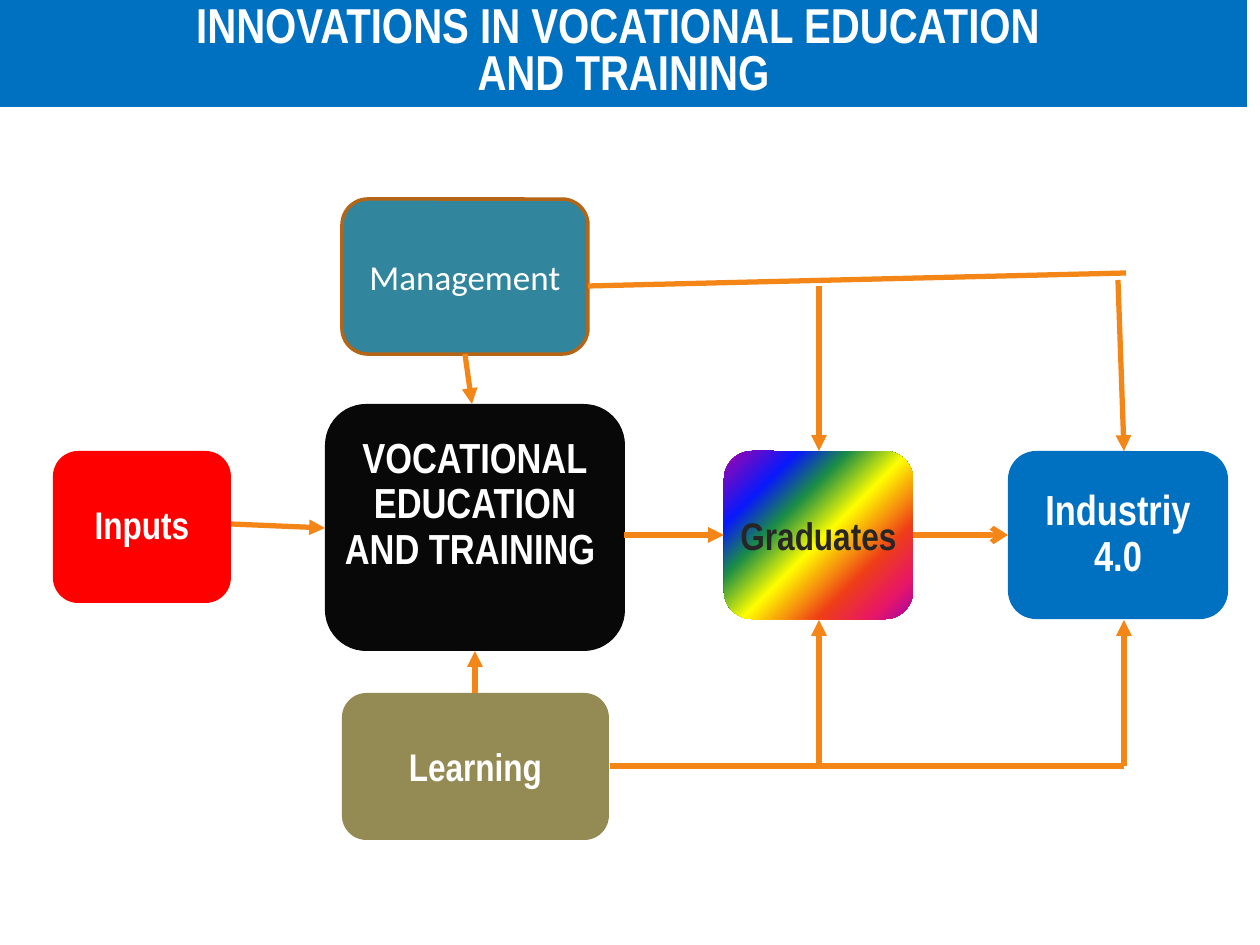
from lxml.etree import SubElement
from pptx import Presentation
from pptx.dml.color import RGBColor
from pptx.enum.shapes import MSO_CONNECTOR, MSO_SHAPE
from pptx.enum.text import MSO_ANCHOR, PP_ALIGN
from pptx.oxml.ns import qn
from pptx.util import Pt

SCALE = 914400 / 126
ORANGE = "F48618"
RAINBOW = [(0, "A603AB"), (21, "0819FB"), (35, "1A8D48"), (52, "FFFF00"),
           (73, "EE3F17"), (88, "E81766"), (100, "A603AB")]


def px(n):
    return round(n * SCALE)


def color(code):
    return RGBColor.from_string(code)


def write(shape, lines, size, ink="FFFFFF", font="Arial Narrow", bold=True,
          space=1.0):
    frame = shape.text_frame
    frame.text = "\n".join(lines)
    for para in frame.paragraphs:
        para.alignment = PP_ALIGN.CENTER
        para.line_spacing = space
        para.font.name = font
        para.font.size = Pt(size)
        para.font.bold = bold
        para.font.color.rgb = color(ink)


def add_box(slide, kind, at, fill, wrap=False):
    box = slide.shapes.add_shape(kind, *map(px, at))
    box.shadow.inherit = False
    if fill:
        box.fill.solid()
        box.fill.fore_color.rgb = color(fill)
    box.line.fill.background()
    box.text_frame.word_wrap = wrap
    box.text_frame.vertical_anchor = MSO_ANCHOR.MIDDLE
    return box


def add_node(slide, at, fill, lines, size, wrap=False, **style):
    node = add_box(slide, MSO_SHAPE.ROUNDED_RECTANGLE, at, fill, wrap)
    write(node, lines, size, **style)
    return node


def blend(shape, stops):
    """Fill the shape with a diagonal gradient of (percent, colour) stops."""
    shape.fill.gradient()
    shape.fill.gradient_angle = 315
    group = shape.fill._fill._gradFill.find(qn("a:gsLst"))
    for old in list(group):
        group.remove(old)
    for place, code in stops:
        stop = SubElement(group, qn("a:gs"), pos=str(place * 1000))
        SubElement(stop, qn("a:srgbClr"), val=code)


def add_line(slide, start, end, head="triangle"):
    line = slide.shapes.add_connector(
        MSO_CONNECTOR.STRAIGHT, *map(px, start + end))
    line.line.color.rgb = color(ORANGE)
    line.line.width = Pt(3)
    if head:
        SubElement(line.line._get_or_add_ln(), qn("a:tailEnd"), type=head)
    SubElement(line._element.spPr, qn("a:effectLst"))


def add_title(slide):
    bar = add_box(slide, MSO_SHAPE.RECTANGLE, (0, 0, 1247, 107), "0070C0", True)
    bar.text_frame.vertical_anchor = MSO_ANCHOR.TOP
    write(bar, ["INNOVATIONS IN VOCATIONAL EDUCATION ", "AND TRAINING"], 28,
          space=0.8)


def add_nodes(slide):
    core = add_node(slide, (325, 404, 300, 247), "080808",
                    ["VOCATIONAL", "EDUCATION", "AND TRAINING "], 24, space=0.9)
    core.text_frame.margin_bottom = px(51)
    grads = add_node(slide, (724, 451, 189, 168), None, ["Graduates"], 22,
                     ink="262626")
    blend(grads, RAINBOW)
    add_node(slide, (1008, 451, 220, 168), "0070C0", ["Industriy", "4.0"], 24,
             space=0.9)
    add_node(slide, (53, 451, 178, 152), "FF0000", ["Inputs"], 22, space=0.9)
    add_node(slide, (342, 693, 267, 147), "948A54", ["Learning"], 22)
    manage = add_node(slide, (342, 199, 246, 155), "31859C", ["Management"], 20,
                      wrap=True, font="Calibri", bold=False)
    manage.line.color.rgb = color("B56516")
    manage.line.width = Pt(2)


def add_flow(slide):
    add_line(slide, (913, 535), (1008, 535), "arrow")
    for start, end in [((588, 286), (1126, 273)), ((610, 766), (1124, 766))]:
        add_line(slide, start, end, None)
    for start, end in [
        ((465, 354), (472, 404)),
        ((231, 524), (325, 528)),
        ((624, 535), (724, 535)),
        ((475, 693), (475, 651)),
        ((819, 286), (819, 451)),
        ((1118, 280), (1124, 451)),
        ((819, 766), (819, 620)),
        ((1124, 766), (1124, 620)),
    ]:
        add_line(slide, start, end)


def main():
    deck = Presentation()
    deck.slide_width, deck.slide_height = px(1260), px(945)
    slide = deck.slides.add_slide(deck.slide_layouts[6])
    add_title(slide)
    add_nodes(slide)
    add_flow(slide)
    deck.save("out.pptx")


if __name__ == "__main__":
    main()
